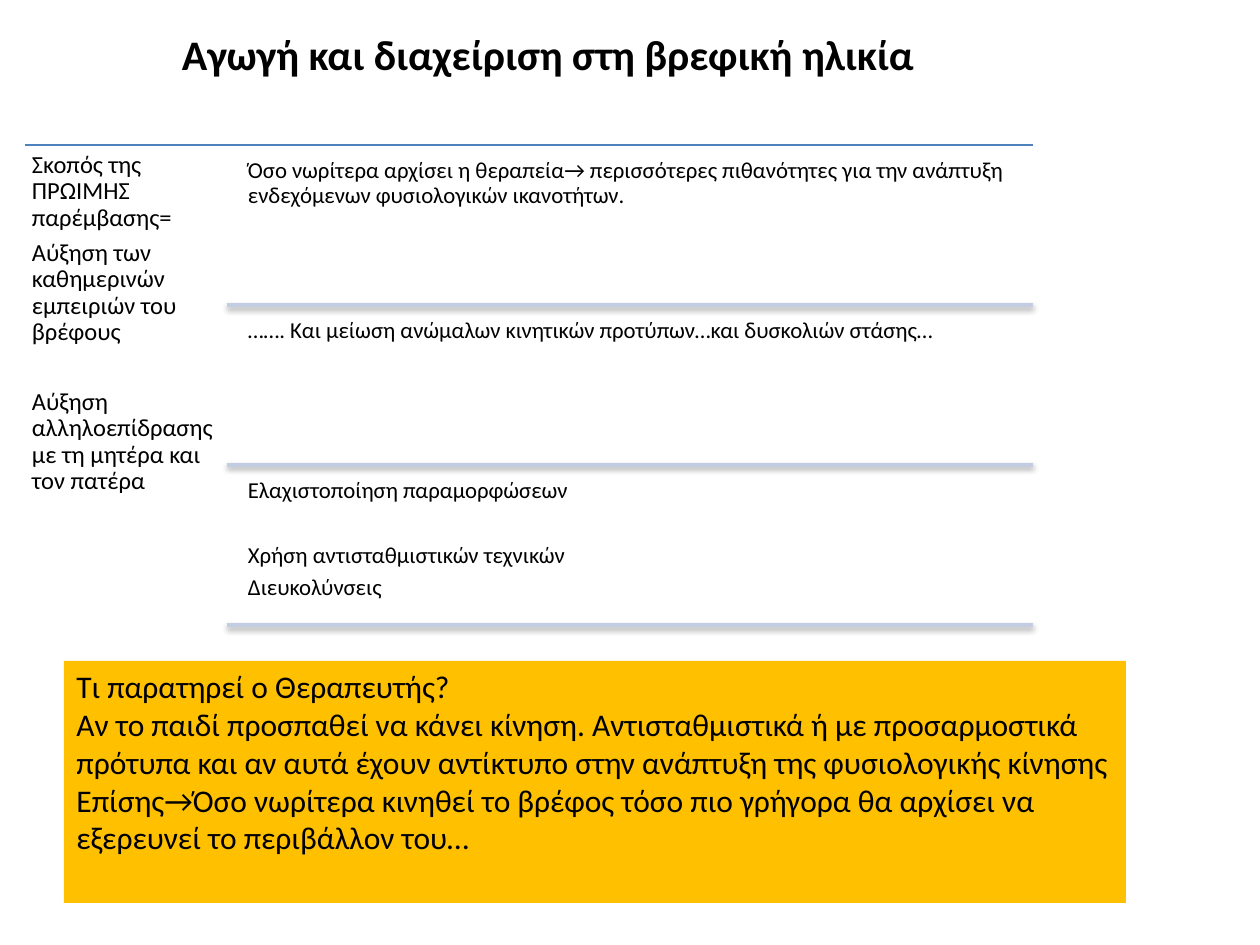
import pptx
import pptx.util
import pptx.dml.color
import pptx.enum.shapes
import pptx.enum.text
import pptx.oxml

RGB = pptx.dml.color.RGBColor
BLACK = RGB(0, 0, 0)
BLUE = RGB(0x4F, 0x81, 0xBD)
PALE = RGB(0xC2, 0xCD, 0xE1)
AMBER = RGB(0xFF, 0xC0, 0x00)
ANCHOR = pptx.enum.text.MSO_ANCHOR
SCALE = 914400 / 126

TITLE = "Αγωγή και διαχείριση στη βρεφική ηλικία"
GOALS = [
    "Σκοπός της ΠΡΩΙΜΗΣ παρέμβασης=",
    "Αύξηση των καθημερινών εμπειριών του βρέφους",
    "Αύξηση αλληλοεπίδρασης με τη μητέρα και τον πατέρα",
]
ROWS = [
    ["Όσο νωρίτερα αρχίσει η θεραπεία→ περισσότερες πιθανότητες για την ανάπτυξη ενδεχόμενων φυσιολογικών ικανοτήτων."],
    ["……. Και μείωση ανώμαλων κινητικών προτύπων…και δυσκολιών στάσης…"],
    ["Ελαχιστοποίηση παραμορφώσεων", "Χρήση αντισταθμιστικών τεχνικών", "Διευκολύνσεις"],
]
NOTES = [
    "Τι παρατηρεί ο Θεραπευτής?",
    "Αν το παιδί προσπαθεί να κάνει κίνηση. Αντισταθμιστικά ή με προσαρμοστικά πρότυπα και αν αυτά έχουν αντίκτυπο στην ανάπτυξη της φυσιολογικής κίνησης",
    "Επίσης→Όσο νωρίτερα κινηθεί το βρέφος τόσο πιο γρήγορα θα αρχίσει να εξερευνεί το περιβάλλον του…",
]
LEFT, TOP, RIGHT = 25, 145, 1033
SPLIT, INDENT = 227, 242
PITCH, GAP = 160, 8

SHADOW = (
    '<a:effectLst xmlns:a="http://schemas.openxmlformats.org/drawingml/2006/main">'
    '<a:outerShdw blurRad="40000" dist="20000" dir="5400000" rotWithShape="0">'
    '<a:srgbClr val="000000"><a:alpha val="38000"/></a:srgbClr>'
    '</a:outerShdw></a:effectLst>'
)
PLAIN = '<a:effectLst xmlns:a="http://schemas.openxmlformats.org/drawingml/2006/main"/>'


def px(num):
    return round(num * SCALE)


def fill_text(shape, lines, size, inset=None, tight=False, wide=None):
    frame = shape.text_frame
    frame.word_wrap = True
    frame.vertical_anchor = ANCHOR.TOP
    if inset is not None:
        frame.margin_left = frame.margin_right = px(inset)
        frame.margin_top = frame.margin_bottom = px(inset)
    frame.text = "\n".join(lines)
    for num, para in enumerate(frame.paragraphs):
        para.alignment = pptx.enum.text.PP_ALIGN.LEFT
        if tight:
            para.line_spacing = 0.9
            para.space_after = pptx.util.Pt(size * 0.35)
        if num == wide:
            para.space_before = pptx.util.Pt(size * 1.4)
        for run in para.runs:
            run.font.name = "Calibri"
            run.font.size = pptx.util.Pt(size)
            run.font.color.rgb = BLACK
    return frame


def add_text(slide, box, lines, size, **opts):
    return fill_text(slide.shapes.add_textbox(*map(px, box)), lines, size, **opts)


def add_rule(slide, left, top, color, width, effect):
    kind = pptx.enum.shapes.MSO_CONNECTOR.STRAIGHT
    rule = slide.shapes.add_connector(kind, px(left), px(top), px(RIGHT), px(top))
    rule.line.color.rgb = color
    rule.line.width = pptx.util.Pt(width)
    rule._element.spPr.append(pptx.oxml.parse_xml(effect))


def main():
    deck = pptx.Presentation()
    deck.slide_width, deck.slide_height = px(1260), px(945)
    slide = deck.slides.add_slide(deck.slide_layouts[6])

    title = add_text(slide, (44, 0, 1008, 108), [TITLE], 24)
    title.vertical_anchor = ANCHOR.MIDDLE
    title.paragraphs[0].alignment = pptx.enum.text.PP_ALIGN.CENTER
    title.paragraphs[0].runs[0].font.bold = True

    add_rule(slide, LEFT, TOP, BLUE, 0.75, PLAIN)
    add_text(slide, (LEFT, TOP, SPLIT - LEFT, 488), GOALS, 14, inset=7, tight=True, wide=2)
    for num, lines in enumerate(ROWS):
        top = TOP + num * PITCH
        box = (INDENT, top + GAP, RIGHT - INDENT, PITCH - GAP)
        add_text(slide, box, lines, 13, inset=6, tight=True, wide=1)
        add_rule(slide, SPLIT, top + PITCH, PALE, 2, SHADOW)

    rect = pptx.enum.shapes.MSO_SHAPE.RECTANGLE
    panel = slide.shapes.add_shape(rect, *map(px, (64, 661, 1062, 242)))
    panel.shadow.inherit = False
    panel.fill.solid()
    panel.fill.fore_color.rgb = AMBER
    panel.line.fill.background()
    fill_text(panel, NOTES, 18)

    deck.save("out.pptx")


if __name__ == "__main__":
    main()
